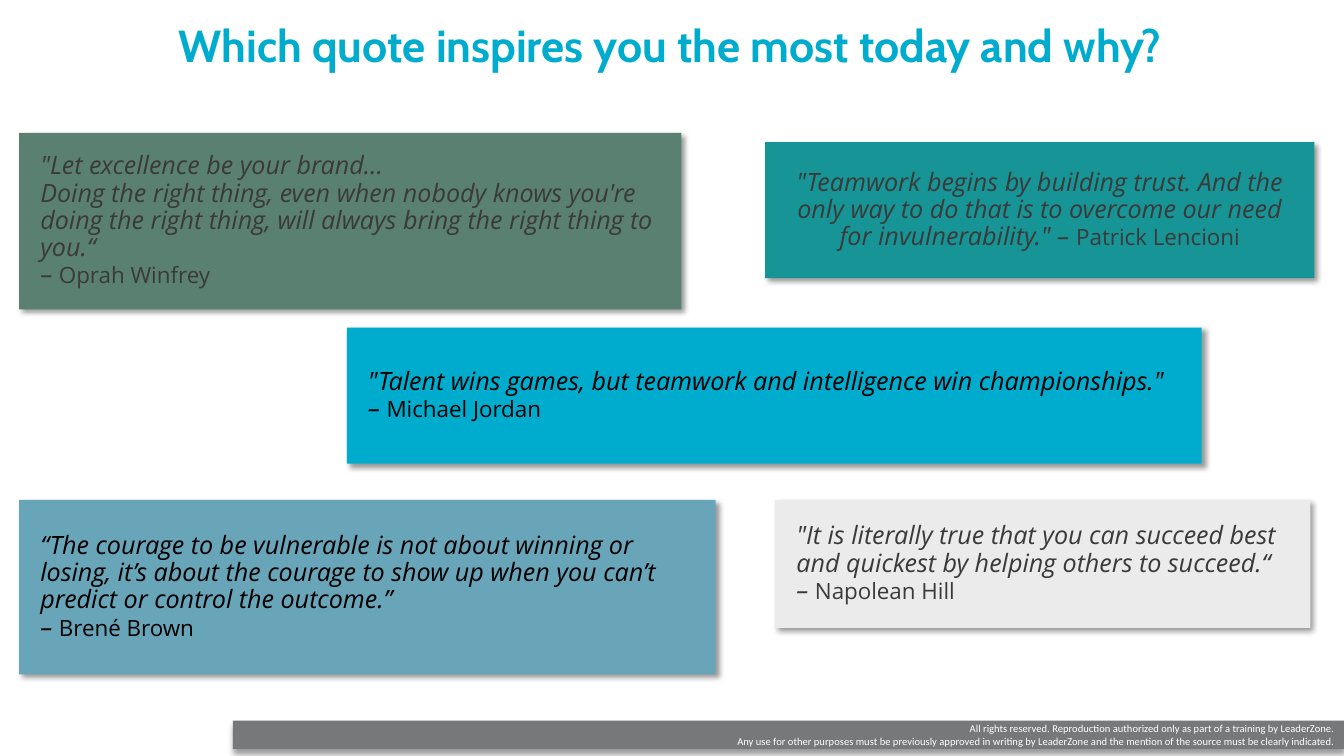
from dataclasses import dataclass
from lxml.etree import SubElement
from pptx import Presentation
from pptx.dml.color import RGBColor
from pptx.enum.shapes import MSO_SHAPE
from pptx.enum.text import MSO_ANCHOR, MSO_AUTO_SIZE, PP_ALIGN
from pptx.oxml.ns import qn
from pptx.util import Pt


@dataclass(frozen=True)
class Theme:
    blue: str = "00ACCD"
    green: str = "5A8071"
    teal: str = "179495"
    steel: str = "69A5B9"
    pale: str = "EBEBEB"
    gray: str = "76787A"
    charcoal: str = "3A3A3A"
    black: str = "000000"
    white: str = "FFFFFF"
    title_size: float = 32
    quote_size: float = 18
    author_size: float = 16
    footer_size: float = 7.5


theme = Theme()


def add_panel(left, top, width, height, fill, shadow_angle):
    """Add a borderless rectangle with a soft shadow."""
    panel = slide.shapes.add_shape(
        MSO_SHAPE.RECTANGLE, Pt(left), Pt(top), Pt(width), Pt(height))
    panel.shadow.inherit = False
    panel.fill.solid()
    panel.fill.fore_color.rgb = RGBColor.from_string(fill)
    panel.line.fill.background()
    effects = panel._element.spPr.find(qn("a:effectLst"))
    shadow = SubElement(
        effects, qn("a:outerShdw"), blurRad=str(Pt(4)), dist=str(Pt(3)),
        dir=str(shadow_angle * 60000), algn="tl", rotWithShape="0")
    color = SubElement(shadow, qn("a:srgbClr"), val=theme.black)
    SubElement(color, qn("a:alpha"), val="40000")
    panel.text_frame.word_wrap = True
    panel.text_frame.vertical_anchor = MSO_ANCHOR.MIDDLE
    return panel


def style_span(span, name, size, color, bold=False, italic=False):
    span.font.name = name
    span.font.size = Pt(size)
    span.font.color.rgb = RGBColor.from_string(color)
    span.font.bold = bold
    span.font.italic = italic


deck = Presentation()
deck.slide_width, deck.slide_height = Pt(960), Pt(540)
slide = deck.slides.add_slide(deck.slide_layouts[5])

# Footer bar
footer = add_panel(166.3, 514.8, 793.7, 20.2, theme.gray, 90)
para = footer.text_frame.paragraphs[0]
para.text = (
    "All rights reserved. Reproduction authorized only as part of a training by LeaderZone.\n"
    "Any use for other purposes must be previously approved in writing by LeaderZone "
    "and the mention of the source must be clearly indicated.")
para.alignment = PP_ALIGN.RIGHT
for line_break in para._p.findall(qn("a:br")):
    SubElement(line_break, qn("a:rPr"), sz=str(int(theme.footer_size * 100)))
for span in para.runs:
    style_span(span, "Calibri", theme.footer_size, theme.white)

# Title
title = slide.shapes.title
title.left, title.top, title.width, title.height = Pt(22.3), Pt(5), Pt(913.7), Pt(50.4)
title.text_frame.text = "Which quote inspires you the most today and why?"
title.text_frame.auto_size = MSO_AUTO_SIZE.NONE
title.text_frame.word_wrap = True
title.text_frame.vertical_anchor = MSO_ANCHOR.BOTTOM
para = title.text_frame.paragraphs[0]
para.alignment = PP_ALIGN.CENTER
para.line_spacing = 0.9
style_span(para.runs[0], "Cabin", theme.title_size, theme.blue, bold=True)

# Quotes: left, top, width, height, fill, text color, alignment, quote, author
quotes = [
    (13.7, 95, 473, 126, theme.green, theme.charcoal, PP_ALIGN.LEFT,
     "\"Let excellence be your brand...\nDoing the right thing, even when nobody knows "
     "you're doing the right thing, will always bring the right thing to you.“\n– ",
     "Oprah Winfrey"),
    (546.5, 101.5, 392.4, 97.2, theme.teal, theme.charcoal, PP_ALIGN.CENTER,
     "\"Teamwork begins by building trust. And the only way to do that is to overcome "
     "our need for invulnerability.\" – ", "Patrick Lencioni"),
    (247.7, 234, 610.6, 97.2, theme.blue, theme.black, PP_ALIGN.LEFT,
     "\"Talent wins games, but teamwork and intelligence win championships.\" – ",
     "Michael Jordan"),
    (13.7, 357.1, 497.5, 124.6, theme.steel, theme.black, PP_ALIGN.LEFT,
     "“The courage to be vulnerable is not about winning or losing, it’s about the "
     "courage to show up when you can’t predict or control the outcome.”\n– ",
     "Brené Brown"),
    (553.7, 357.1, 382.3, 91.4, theme.pale, theme.charcoal, PP_ALIGN.LEFT,
     "\"It is literally true that you can succeed best and quickest by helping others "
     "to succeed.“\n– ", "Napolean Hill"),
]
for left, top, width, height, fill, color, alignment, quote, author in quotes:
    box = add_panel(left, top, width, height, fill, 45)
    frame = box.text_frame
    frame.margin_left = frame.margin_right = Pt(15.1)
    frame.margin_top = frame.margin_bottom = Pt(15.1)
    para = frame.paragraphs[0]
    para.text = quote
    para.alignment = alignment
    para.line_spacing = 0.9
    for span in para.runs:
        style_span(span, "Open Sans", theme.quote_size, color, italic=True)
    span = para.add_run()
    span.text = author
    style_span(span, "Open Sans", theme.author_size, color)

deck.save("out.pptx")
